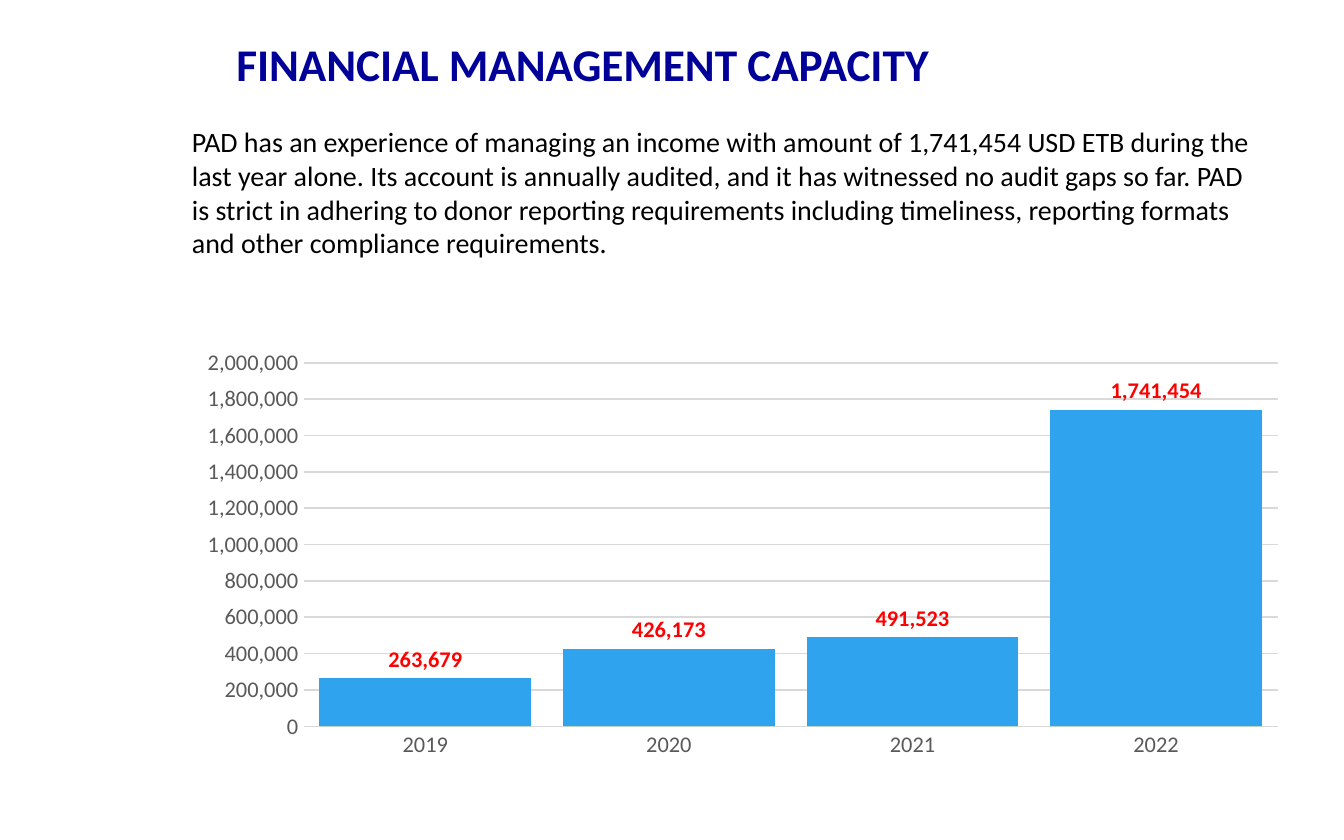
from dataclasses import dataclass

from lxml.etree import SubElement
from pptx import Presentation
from pptx.chart.data import CategoryChartData
from pptx.dml.color import RGBColor
from pptx.enum.chart import XL_CHART_TYPE as ChartType
from pptx.enum.chart import XL_LABEL_POSITION as LabelPosition
from pptx.enum.chart import XL_TICK_MARK as TickMark
from pptx.enum.text import MSO_ANCHOR as Anchor
from pptx.enum.text import PP_ALIGN as Align
from pptx.oxml.ns import qn
from pptx.util import Inches, Pt

TITLE = "FINANCIAL MANAGEMENT CAPACITY"
BODY = (
    "PAD has an experience of managing an income with amount of 1,741,454 USD ETB "
    "during the last year alone. Its account is annually audited, and it has witnessed "
    "no audit gaps so far. PAD is strict in adhering to donor reporting requirements "
    "including timeliness, reporting formats and other compliance requirements."
)
YEARS = ["2019", "2020", "2021", "2022"]
INCOME = {
    "Series 1": [263679, 426173, 491523, 1741454],
    "Series 2": [0, 0, 0, 0],
    "Series 3": [0, 0, 0, 0],
}

# Left, top, width and height in inches
TITLE_BOX = (1.17, 0.12, 6.33, 0.75)
BODY_BOX = (1.33, 0.88, 8.17, 1.11)
CHART_BOX = (0.58, 2.21, 9.33, 3.92)
# Plot area as shares of the chart
PLOT = {"x": 0.18, "y": 0.125, "w": 0.777, "h": 0.69}


@dataclass(frozen=True)
class Theme:
    font: str = "Calibri"
    title: str = "000099"
    body: str = "000000"
    axis: str = "595959"
    grid: str = "D9D9D9"
    label: str = "FF0000"
    series: tuple = ("2FA3EE", "4BCAAD", "86C157")
    title_size: float = 24.3
    body_size: float = 15
    chart_size: float = 12
    line_width: float = 0.75


THEME = Theme()


def style_font(font, size, color, bold=False):
    font.name = THEME.font
    font.size = Pt(size)
    font.bold = bold
    font.color.rgb = RGBColor.from_string(color)


def style_line(line):
    line.color.rgb = RGBColor.from_string(THEME.grid)
    line.width = Pt(THEME.line_width)


def add_text(slide, box, text, size, color, bold=False):
    frame = slide.shapes.add_textbox(*map(Inches, box)).text_frame
    frame.word_wrap = True
    paragraph = frame.paragraphs[0]
    paragraph.text = text
    style_font(paragraph.font, size, color, bold)
    return frame


def fix_plot_area(chart):
    """Place the inner plot area by hand."""
    plot_area = chart.element.chart.plotArea
    for old in plot_area.findall(qn("c:layout")):
        plot_area.remove(old)
    layout = SubElement(plot_area, qn("c:layout"))
    plot_area.insert(0, layout)
    manual = SubElement(layout, qn("c:manualLayout"))
    settings = {"layoutTarget": "inner", "xMode": "edge", "yMode": "edge", **PLOT}
    for name, value in settings.items():
        SubElement(manual, qn(f"c:{name}")).set("val", str(value))


def add_income_chart(slide):
    data = CategoryChartData(number_format="#,##0")
    data.categories = YEARS
    for name, values in INCOME.items():
        data.add_series(name, values)
    chart = slide.shapes.add_chart(
        ChartType.COLUMN_CLUSTERED, *map(Inches, CHART_BOX), data
    ).chart
    chart.has_legend = False
    chart.has_title = False
    style_font(chart.font, THEME.chart_size, THEME.axis)
    fix_plot_area(chart)

    for axis in (chart.category_axis, chart.value_axis):
        axis.major_tick_mark = axis.minor_tick_mark = TickMark.NONE
        style_font(axis.tick_labels.font, THEME.chart_size, THEME.axis)
    style_line(chart.category_axis.format.line)
    value_axis = chart.value_axis
    value_axis.minimum_scale, value_axis.maximum_scale = 0, 2000000
    value_axis.major_unit = 200000
    value_axis.tick_labels.number_format = "#,##0"
    value_axis.tick_labels.number_format_is_linked = False
    value_axis.format.line.fill.background()
    style_line(value_axis.major_gridlines.format.line)

    plot = chart.plots[0]
    plot.gap_width, plot.overlap = 15, 100
    plot.vary_by_categories = False
    for series, color in zip(plot.series, THEME.series):
        series.format.fill.solid()
        series.format.fill.fore_color.rgb = RGBColor.from_string(color)
    labels = plot.series[0].data_labels
    labels.show_value = True
    labels.position = LabelPosition.OUTSIDE_END
    labels.number_format = "#,##0"
    labels.number_format_is_linked = False
    style_font(labels.font, THEME.chart_size, THEME.label, bold=True)


def main():
    presentation = Presentation()
    presentation.slide_width, presentation.slide_height = Inches(10), Inches(6.25)
    slide = presentation.slides.add_slide(presentation.slide_layouts[6])

    title = add_text(slide, TITLE_BOX, TITLE, THEME.title_size, THEME.title, bold=True)
    title.vertical_anchor = Anchor.MIDDLE
    title.paragraphs[0].alignment = Align.CENTER
    title.paragraphs[0].line_spacing = 0.9
    add_income_chart(slide)
    add_text(slide, BODY_BOX, BODY, THEME.body_size, THEME.body)

    presentation.save("out.pptx")


if __name__ == "__main__":
    main()
